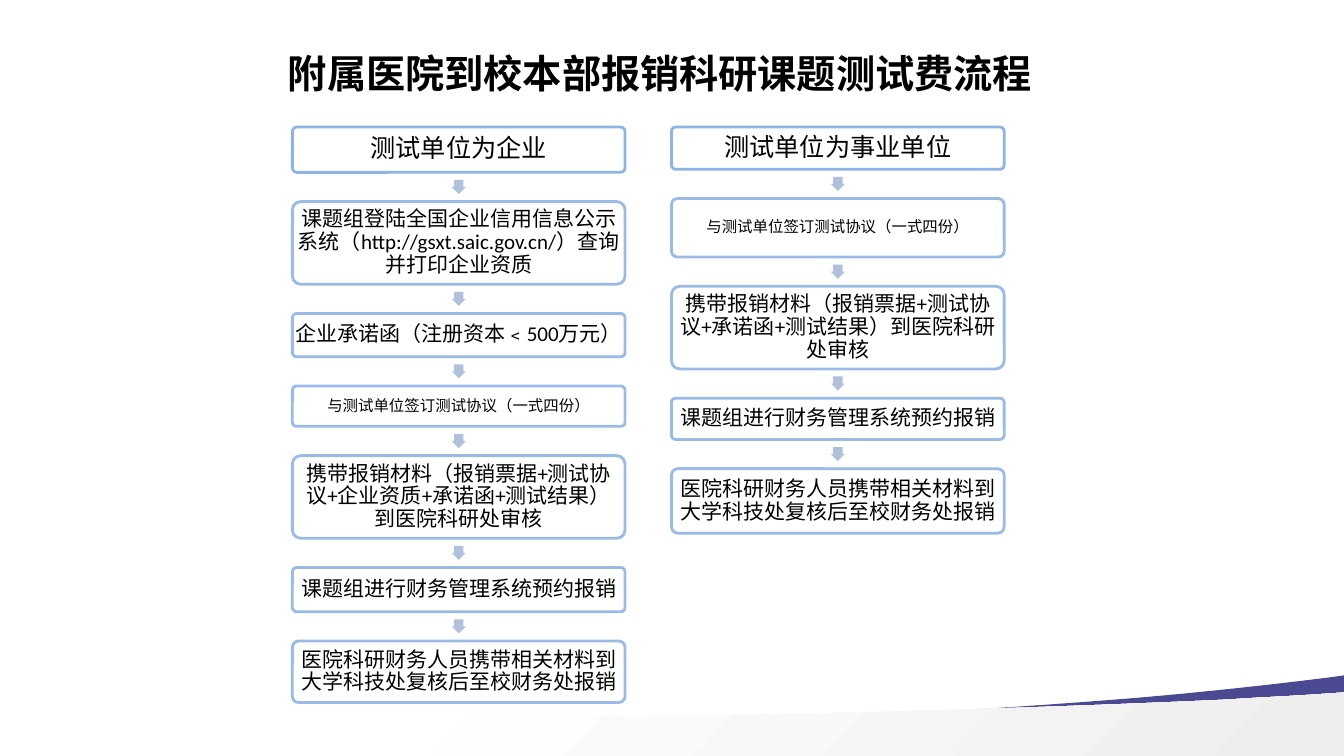
from lxml.etree import SubElement
from pptx import Presentation
from pptx.dml.color import RGBColor
from pptx.enum.shapes import MSO_SHAPE
from pptx.enum.text import MSO_ANCHOR, MSO_AUTO_SIZE, PP_ALIGN
from pptx.oxml.ns import qn
from pptx.util import Inches, Pt

COLORS = {"ink": "000000", "white": "FFFFFF", "edge": "8EB4E3",
          "arrow": "B2C1DB", "band": "4B4992", "haze": "EEEEEE"}
FONT = "Calibri"
TITLE = "附属医院到校本部报销科研课题测试费流程"

SIGN = "与测试单位签订测试协议（一式四份）"
BOOK = "课题组进行财务管理系统预约报销"
CLAIM = "医院科研财务人员携带相关材料到大学科技处复核后至校财务处报销"

# Each column: left edge, then its steps as (text, height, font size)
FLOWS = [
    (2.9, [
        ("测试单位为企业", 0.45, 18),
        ("课题组登陆全国企业信用信息公示系统（http://gsxt.saic.gov.cn/）查询并打印企业资质", 0.82, 15),
        ("企业承诺函（注册资本﹤500万元）", 0.43, 15),
        (SIGN, 0.4, 11),
        ("携带报销材料（报销票据+测试协议+企业资质+承诺函+测试结果）到医院科研处审核", 0.82, 15),
        (BOOK, 0.44, 15),
        (CLAIM, 0.61, 15),
    ]),
    (6.66, [
        ("测试单位为事业单位", 0.42, 18),
        (SIGN, 0.58, 11),
        ("携带报销材料（报销票据+测试协议+承诺函+测试结果）到医院科研处审核", 0.82, 15),
        (BOOK, 0.41, 15),
        (CLAIM, 0.64, 15),
    ]),
]
TOP, WIDTH, GAP, ARROW = 1.26, 3.3, 0.29, 0.14

# Outlines: a point is a line end, three points are a cubic curve
BAND = [(13.33, 6.7), (13.33, 7.35), (0, 7.35), (0, 7.08), (0.01, 7.08),
        ((3.01, 7.41), (8.2, 7.17), (11.19, 6.93)),
        ((11.79, 6.88), (12.47, 6.81), (13.19, 6.72))]
HAZE = [(13.33, 6.87), (13.33, 7.5), (0, 7.5), (0, 7.03), (0.44, 7.05),
        ((3.92, 7.21), (9.1, 7.08), (12.19, 6.94)),
        ((12.46, 6.92), (12.74, 6.91), (13.04, 6.89))]
STEPS = 24


def rgb(name):
    return RGBColor.from_string(COLORS[name])


def paint(shape, name):
    shape.fill.solid()
    shape.fill.fore_color.rgb = rgb(name)


def flatten(outline):
    """Turn lines and cubic curves into a plain list of points in EMU."""
    points = []
    for item in outline:
        if isinstance(item[0], tuple):
            a, (b, c, d) = points[-1], item
            for i in range(1, STEPS + 1):
                t = i / STEPS
                u = 1 - t
                points.append(tuple(
                    u**3 * p + 3 * u * u * t * q + 3 * u * t * t * r + t**3 * s
                    for p, q, r, s in zip(a, b, c, d)))
        else:
            points.append(item)
    return [(Inches(x), Inches(y)) for x, y in points]


def draw(outline):
    start, *rest = flatten(outline)
    pen = slide.shapes.build_freeform(*start)
    pen.add_line_segments(rest, close=True)
    shape = pen.convert_to_shape()
    shape.shadow.inherit = False
    shape.line.fill.background()
    return shape


def write(shape, text, size, bold=False, **frame):
    body = shape.text_frame
    for key, value in {"word_wrap": True, **frame}.items():
        setattr(body, key, value)
    para = body.paragraphs[0]
    para.alignment = PP_ALIGN.CENTER
    run = para.add_run()
    run.text = text
    for key, value in {"name": FONT, "size": Pt(size), "bold": bold}.items():
        setattr(run.font, key, value)
    run.font.color.rgb = rgb("ink")
    return para


def add(kind, left, top, width, height):
    shape = slide.shapes.add_shape(kind, *map(Inches, (left, top, width, height)))
    shape.shadow.inherit = False
    return shape


def add_step(left, top, text, height, size, head):
    box = add(MSO_SHAPE.ROUNDED_RECTANGLE, left, top, WIDTH, height)
    box.adjustments[0] = 0.1
    box.line.color.rgb = rgb("edge")
    box.line.width = Pt(2)
    if head:
        paint(box, "white")
    else:
        box.fill.background()
        tint = box.element.spPr.find(f".//{qn('a:ln')}//{qn('a:srgbClr')}")
        SubElement(tint, qn("a:alpha"), val="90000")
    inset = Inches(0.03 if head else 0.02)
    sides = ("left", "top", "right", "bottom")
    para = write(box, text, size, vertical_anchor=MSO_ANCHOR.MIDDLE,
                 **{f"margin_{side}": inset for side in sides})
    para.line_spacing = 0.9


def add_arrow(left, top):
    arrow = add(MSO_SHAPE.RIGHT_ARROW, left + (WIDTH - ARROW) / 2,
                top + (GAP - ARROW) / 2, ARROW, ARROW)
    arrow.rotation = 90
    arrow.adjustments[0] = 0.667
    arrow.adjustments[1] = 0.5
    paint(arrow, "arrow")
    arrow.line.fill.background()


deck = Presentation()
deck.slide_width, deck.slide_height = Inches(13.33), Inches(7.5)
slide = deck.slides.add_slide(deck.slide_layouts[6])

paint(draw(BAND), "band")
haze = draw(HAZE)
haze.fill.gradient()
haze.fill.gradient_angle = 315
for stop, (place, name) in zip(haze.fill.gradient_stops,
                               [(0.26, "white"), (1, "haze")]):
    stop.position = place
    stop.color.rgb = rgb(name)

title = slide.shapes.add_textbox(*map(Inches, (2.1, 0.44, 8.89, 0.57)))
write(title, TITLE, 28, bold=True, auto_size=MSO_AUTO_SIZE.SHAPE_TO_FIT_TEXT)

for left, steps in FLOWS:
    top = TOP
    for i, (text, height, size) in enumerate(steps):
        if i:
            add_arrow(left, top)
            top += GAP
        add_step(left, top, text, height, size, head=i == 0)
        top += height

deck.save("out.pptx")
